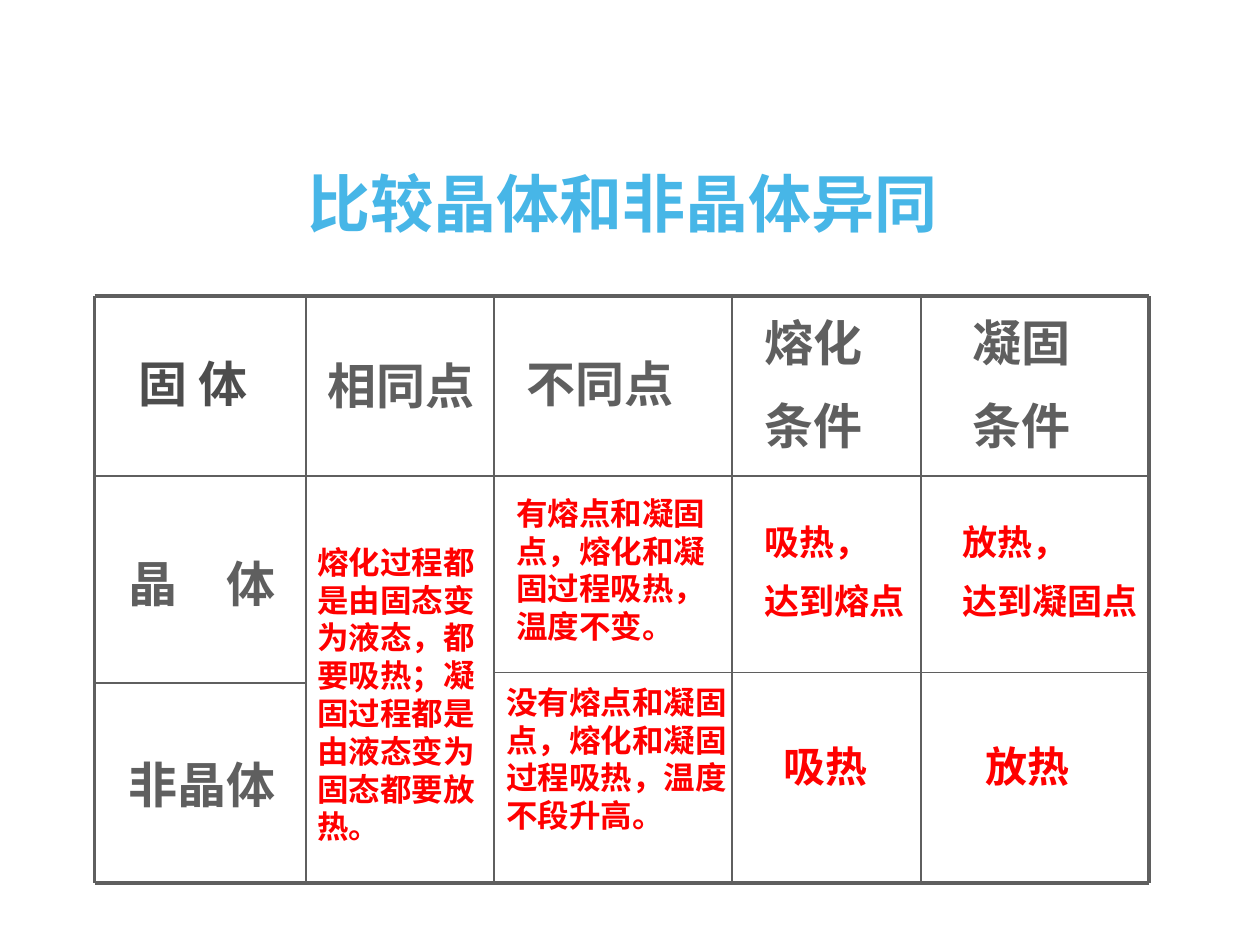
from lxml.etree import SubElement
from pptx import Presentation
from pptx.dml.color import RGBColor
from pptx.enum.shapes import MSO_CONNECTOR as Connector
from pptx.enum.text import MSO_ANCHOR as Anchor, MSO_AUTO_SIZE as AutoSize, PP_ALIGN as Align
from pptx.oxml.ns import qn
from pptx.util import Inches, Pt

COLORS = {"title": "47B6E7", "line": "5F5F5F", "head": "5F5F5F",
          "dark": "4D4D4D", "answer": "FF0000"}
FONTS = {"title": "Noto Sans CJK SC", "body": "Arial"}

# Edges of the comparison grid, in inches
COLS = [0.75, 2.43, 3.92, 5.81, 7.31, 9.12]
ROWS = [2.35, 3.78, 5.34, 7.01]
LEFT_SPLIT = 5.42  # the first column is divided slightly lower


class SlideBuilder:
    """Holds the style and the current slide."""

    def __init__(self, prs):
        self.s = prs.slides.add_slide(prs.slide_layouts[5])

    def add_run(self, p, text, size, color, font):
        r = p.add_run()
        r.text = text
        r.font.name = font
        r.font.size = Pt(size)
        r.font.bold = True
        r.font.color.rgb = RGBColor.from_string(COLORS[color])

    def title(self, text, left, top, width, height, size=36):
        sp = self.s.shapes.title
        sp.left, sp.top, sp.width, sp.height = map(Inches, (left, top, width, height))
        tf = sp.text_frame
        tf.word_wrap = False
        tf.auto_size = AutoSize.NONE
        tf.vertical_anchor = Anchor.TOP
        p = tf.paragraphs[0]
        p.alignment = Align.CENTER
        p.line_spacing = 0.9
        p.space_before = Pt(0)
        self.add_run(p, text, size, "title", FONTS["title"])

    def line(self, x1, y1, x2, y2, weight):
        cx = self.s.shapes.add_connector(Connector.STRAIGHT, *map(Inches, (x1, y1, x2, y2)))
        cx.line.color.rgb = RGBColor.from_string(COLORS["line"])
        cx.line.width = Pt(weight)
        SubElement(cx._element.spPr, qn("a:effectLst"))

    def cell(self, col, row, dx, dy, width, height, lines, size, color):
        """Put text in a grid cell, offset from the cell's top left corner."""
        sp = self.s.shapes.add_textbox(Inches(COLS[col] + dx), Inches(ROWS[row] + dy),
                                       Inches(width), Inches(height))
        tf = sp.text_frame
        tf.word_wrap = True
        tf.auto_size = AutoSize.SHAPE_TO_FIT_TEXT
        for i, text in enumerate(lines):
            p = tf.add_paragraph() if i else tf.paragraphs[0]
            p.space_before = Pt(size / 2 if i else 0)
            self.add_run(p, text, size, color, FONTS["body"])


def main():
    prs = Presentation()
    prs.slide_width, prs.slide_height = Inches(10), Inches(7.5)
    b = SlideBuilder(prs)
    b.title("比较晶体和非晶体异同", 2.19, 1.32, 5.5, 0.67)

    # Grid: heavy frame, thin inner lines
    left, right, top, bottom = COLS[0], COLS[-1], ROWS[0], ROWS[-1]
    for x in COLS:
        b.line(x, top, x, bottom, 2.25 if x in (left, right) else 1)
    for y in (top, bottom):
        b.line(left, y, right, y, 2.25)
    b.line(left, ROWS[1], right, ROWS[1], 1)
    b.line(left, LEFT_SPLIT, COLS[1], LEFT_SPLIT, 0.75)
    b.line(COLS[2], ROWS[2], right, ROWS[2], 0.75)

    # Header row and first column
    headings = [
        (0, 0, 0.25, 0.41, 2.33, 0.57, ["固 体"], "dark"),
        (1, 0, 0.07, 0.42, 2.5, 0.57, ["相同点"], "head"),
        (2, 0, 0.16, 0.41, 2.5, 0.57, ["不同点"], "head"),
        (3, 0, 0.16, 0.08, 1.34, 1.27, ["熔化", "条件"], "head"),
        (4, 0, 0.31, 0.08, 1.26, 1.27, ["凝固", "条件"], "head"),
        (0, 1, 0.17, 0.56, 1.75, 0.57, ["晶　体"], "head"),
        (0, 2, 0.17, 0.6, 1.75, 0.57, ["非晶体"], "head"),
    ]
    for *place, lines, color in headings:
        b.cell(*place, lines, 28, color)

    # Answers; the common points span both lower rows
    answers = [
        (1, 1, -0.01, 0.48, 1.5, 2.5,
         ["熔化过程都是由固态变为液态，都要吸热；凝固过程都是由液态变为固态都要放热。"], 18),
        (2, 1, 0.08, 0.09, 1.75, 1.3, ["有熔点和凝固点，熔化和凝固过程吸热，温度不变。"], 18),
        (2, 2, 0, 0.03, 2.17, 1.3, ["没有熔点和凝固点，熔化和凝固过程吸热，温度不段升高。"], 18),
        (3, 1, 0.16, 0.3, 1.48, 0.93, ["吸热，", "达到熔点"], 20),
        (4, 1, 0.23, 0.3, 2.08, 0.93, ["放热，", "达到凝固点"], 20),
        (3, 2, 0.31, 0.49, 1.02, 0.5, ["吸热"], 24),
        (4, 2, 0.41, 0.49, 1.08, 0.5, ["放热"], 24),
    ]
    for *place, lines, size in answers:
        b.cell(*place, lines, size, "answer")

    prs.save("out.pptx")


if __name__ == "__main__":
    main()
